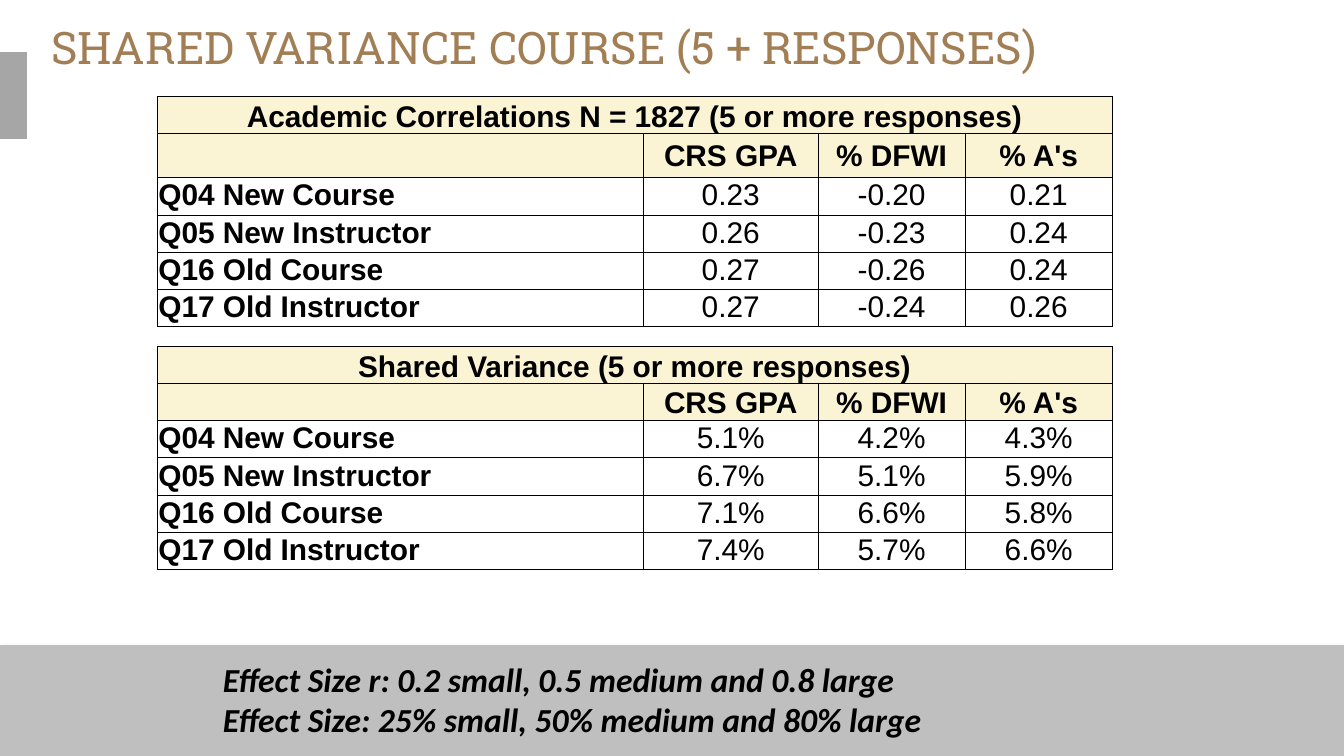
from dataclasses import dataclass

import lxml.etree
import pptx
import pptx.dml.color
import pptx.enum.shapes
import pptx.enum.text
import pptx.oxml.ns
import pptx.util

Pt = pptx.util.Pt
RGBColor = pptx.dml.color.RGBColor
ALIGN = pptx.enum.text.PP_ALIGN
ANCHOR = pptx.enum.text.MSO_ANCHOR
qn = pptx.oxml.ns.qn

BLACK = RGBColor(0x00, 0x00, 0x00)
WHITE = RGBColor(0xFF, 0xFF, 0xFF)
CREAM = RGBColor(0xFA, 0xF3, 0xD4)
BRONZE = RGBColor(0xA2, 0x7E, 0x55)
BAND_GRAY = RGBColor(0xBF, 0xBF, 0xBF)
TAB_GRAY = RGBColor(0xA6, 0xA6, 0xA6)

TABLE_LEFT = 84.2
COLUMN_WIDTHS = (260.5, 93.6, 78.8, 78.8)
ROW_HEIGHT = 18.5
CELL_MARGINS = {"margin_left": Pt(0.7), "margin_right": Pt(0.7),
                "margin_top": Pt(0.7), "margin_bottom": 0}
NO_MARGINS = dict.fromkeys(CELL_MARGINS, 0)

TITLE_FONT = {"name": "Roboto Slab", "size": Pt(24)}
TABLE_FONT = {"name": "Arial", "size": Pt(16)}
NOTE_FONT = {"name": "Calibri", "size": Pt(18), "bold": True, "italic": True}

MEASURES = ("", "CRS GPA", "% DFWI", "% A's")
QUESTIONS = ("Q04 New Course", "Q05 New Instructor",
             "Q16 Old Course", "Q17 Old Instructor")


@dataclass
class ResultTable:
    heading: str
    top: float
    measure_height: float
    values: tuple


RESULTS = (
    ResultTable("Academic Correlations N = 1827 (5 or more responses)", 51.6, 23.8, (
        ("0.23", "-0.20", "0.21"),
        ("0.26", "-0.23", "0.24"),
        ("0.27", "-0.26", "0.24"),
        ("0.27", "-0.24", "0.26"))),
    ResultTable("Shared Variance (5 or more responses)", 185.6, ROW_HEIGHT, (
        ("5.1%", "4.2%", "4.3%"),
        ("6.7%", "5.1%", "5.9%"),
        ("7.1%", "6.6%", "5.8%"),
        ("7.4%", "5.7%", "6.6%"))),
)


def apply(target, values: dict) -> None:
    for key, value in values.items():
        setattr(target, key, value)


def add_run(paragraph, text: str, font: dict, color: RGBColor) -> None:
    run = paragraph.add_run()
    run.text = text
    apply(run.font, font)
    run.font.color.rgb = color


def add_block(slide, left: float, top: float, width: float, height: float,
              color: RGBColor):
    block = slide.shapes.add_shape(pptx.enum.shapes.MSO_SHAPE.RECTANGLE,
                                   Pt(left), Pt(top), Pt(width), Pt(height))
    block.shadow.inherit = False
    block.fill.solid()
    block.fill.fore_color.rgb = color
    block.line.fill.background()
    return block


def add_soft_shadow(shape) -> None:
    effects = shape.element.spPr.find(qn("a:effectLst"))
    shadow = lxml.etree.SubElement(
        effects, qn("a:outerShdw"), blurRad=str(Pt(3.1)), dist=str(Pt(1.8)),
        dir="5400000", rotWithShape="0")
    tint = lxml.etree.SubElement(shadow, qn("a:srgbClr"), val=str(BLACK))
    lxml.etree.SubElement(tint, qn("a:alpha"), val="35000")


def add_borders(cell) -> None:
    properties = cell._tc.get_or_add_tcPr()
    for position, side in enumerate(("a:lnL", "a:lnR", "a:lnT", "a:lnB")):
        border = lxml.etree.Element(qn(side), w=str(Pt(0.5)))
        fill = lxml.etree.SubElement(border, qn("a:solidFill"))
        lxml.etree.SubElement(fill, qn("a:srgbClr"), val=str(BLACK))
        properties.insert(position, border)


def fill_cell(cell, text: str, background: RGBColor, bold: bool,
              align, anchor) -> None:
    apply(cell, {**CELL_MARGINS, "vertical_anchor": anchor})
    cell.fill.solid()
    cell.fill.fore_color.rgb = background
    add_borders(cell)
    paragraph = cell.text_frame.paragraphs[0]
    paragraph.alignment = align
    if text:
        add_run(paragraph, text, {**TABLE_FONT, "bold": bold}, BLACK)
    else:
        # Keeps an empty cell from stretching its row
        lxml.etree.SubElement(paragraph._p, qn("a:endParaRPr"), sz="1600")


def add_result_table(slide, result: ResultTable) -> None:
    heights = [ROW_HEIGHT, result.measure_height] + [ROW_HEIGHT] * len(QUESTIONS)
    table = slide.shapes.add_table(
        len(heights), len(COLUMN_WIDTHS), Pt(TABLE_LEFT), Pt(result.top),
        Pt(sum(COLUMN_WIDTHS)), Pt(sum(heights))).table
    table.horz_banding = False
    for column, width in zip(table.columns, COLUMN_WIDTHS):
        column.width = Pt(width)
    for row, height in zip(table.rows, heights):
        row.height = Pt(height)

    # Heading across all columns, then the measures
    table.cell(0, 0).merge(table.cell(0, len(COLUMN_WIDTHS) - 1))
    for index, measure in enumerate(MEASURES):
        fill_cell(table.cell(0, index), "" if index else result.heading,
                  CREAM, True, ALIGN.CENTER, ANCHOR.BOTTOM)
        fill_cell(table.cell(1, index), measure,
                  CREAM, True, ALIGN.CENTER, ANCHOR.MIDDLE)

    # One row per question
    for row, (question, values) in enumerate(zip(QUESTIONS, result.values), 2):
        for index, text in enumerate((question, *values)):
            fill_cell(table.cell(row, index), text, WHITE, index == 0,
                      ALIGN.CENTER if index else ALIGN.LEFT, ANCHOR.TOP)


def main() -> None:
    deck = pptx.Presentation()
    deck.slide_width, deck.slide_height = Pt(720), Pt(405)
    slide = deck.slides.add_slide(deck.slide_layouts[6])

    # Footer band and side tab
    add_soft_shadow(add_block(slide, 0, 345.6, 720, 59.4, BAND_GRAY))
    add_block(slide, -2, 28, 16.5, 46.5, TAB_GRAY)

    # Title
    title = slide.shapes.add_textbox(Pt(27.4), Pt(10.8), Pt(648), Pt(36.7)).text_frame
    apply(title, {**NO_MARGINS, "word_wrap": True})
    add_run(title.paragraphs[0], "SHARED VARIANCE COURSE (5 + RESPONSES)",
            TITLE_FONT, BRONZE)

    # Result tables
    for result in RESULTS:
        add_result_table(slide, result)

    # Effect size notes
    notes = slide.shapes.add_textbox(Pt(112.3), Pt(349.2), Pt(393.8), Pt(51.1)).text_frame
    apply(notes, {"word_wrap": False,
                  "auto_size": pptx.enum.text.MSO_AUTO_SIZE.SHAPE_TO_FIT_TEXT})
    add_run(notes.paragraphs[0], "Effect Size r: 0.2 small, 0.5 medium and 0.8 large",
            NOTE_FONT, BLACK)
    add_run(notes.add_paragraph(), "Effect Size: 25% small, 50% medium and 80% large",
            NOTE_FONT, BLACK)

    deck.save("out.pptx")


if __name__ == "__main__":
    main()
